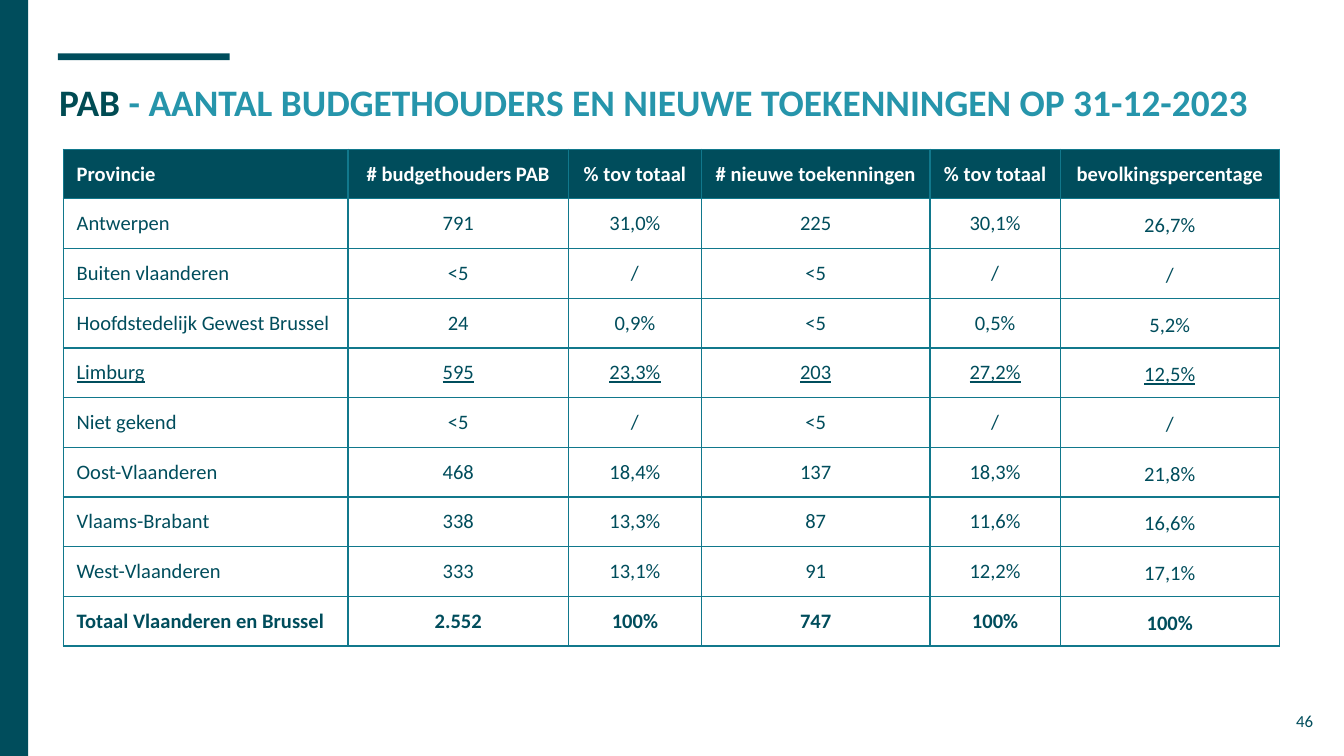
from lxml import etree
from pptx import Presentation
from pptx.dml.color import RGBColor
from pptx.enum.shapes import MSO_SHAPE
from pptx.enum.text import MSO_ANCHOR, MSO_AUTO_SIZE, PP_ALIGN
from pptx.oxml.ns import qn
from pptx.util import Pt

RECTANGLE = MSO_SHAPE.RECTANGLE
TOP, MIDDLE = MSO_ANCHOR.TOP, MSO_ANCHOR.MIDDLE
LEFT, CENTER, RIGHT = PP_ALIGN.LEFT, PP_ALIGN.CENTER, PP_ALIGN.RIGHT
NO_AUTOFIT = MSO_AUTO_SIZE.NONE

TITLE_ONLY = 5
FONT = "Calibri"
TEAL, DARK_TEAL, BLUE, BORDER, WHITE = "004D5C", "004B53", "2695AB", "11788C", "FFFFFF"
COLUMN_WIDTHS = [152.64, 118.08, 71.28, 122.4, 69.84, 117.36]
ROW_HEIGHT = 26.64
HEADER = ["Provincie", "# budgethouders PAB", "% tov totaal",
          "# nieuwe toekenningen", "% tov totaal", "bevolkingspercentage"]
PROVINCES = [
    ["Antwerpen", "791", "31,0%", "225", "30,1%", "26,7%"],
    ["Buiten vlaanderen", "<5", "/", "<5", "/", "/"],
    ["Hoofdstedelijk Gewest Brussel", "24", "0,9%", "<5", "0,5%", "5,2%"],
    ["Limburg", "595", "23,3%", "203", "27,2%", "12,5%"],
    ["Niet gekend", "<5", "/", "<5", "/", "/"],
    ["Oost-Vlaanderen", "468", "18,4%", "137", "18,3%", "21,8%"],
    ["Vlaams-Brabant", "338", "13,3%", "87", "11,6%", "16,6%"],
    ["West-Vlaanderen", "333", "13,1%", "91", "12,2%", "17,1%"],
]
TOTAL = ["Totaal Vlaanderen en Brussel", "2.552", "100%", "747", "100%", "100%"]


def colour(value):
    """Turn a hex string into a colour."""
    return RGBColor.from_string(value)


def apply(target, values):
    """Set each attribute of the target from a dict."""
    for name, value in values.items():
        setattr(target, name, value)


def place(left, top, width, height):
    """Name the position and size, given in points."""
    return {"left": Pt(left), "top": Pt(top), "width": Pt(width), "height": Pt(height)}


def add_span(para, text, fill, **font):
    """Add a run with its font values."""
    span = para.add_run()
    span.text = text
    apply(span.font, {"name": FONT, **font})
    span.font.color.rgb = colour(fill)


def format_frame(frame):
    """Give a text frame its insets, wrapping and top anchor."""
    apply(frame, {"word_wrap": True, "auto_size": NO_AUTOFIT, "vertical_anchor": TOP})
    for side in ("left", "top", "right", "bottom"):
        setattr(frame, f"margin_{side}", Pt(7.2))


def add_bar(page, **box):
    """Add a solid teal bar."""
    bar = page.shapes.add_shape(RECTANGLE, **box)
    bar.shadow.inherit = False
    bar.fill.solid()
    bar.fill.fore_color.rgb = colour(TEAL)
    bar.line.fill.background()


def fill_title(page):
    """Write the two-coloured title in its placeholder."""
    title = page.shapes.title
    apply(title, place(24.48, 35.28, 671.04, 45.36))
    format_frame(title.text_frame)
    para = title.text_frame.paragraphs[0]
    para.alignment = LEFT
    add_span(para, "PAB ", DARK_TEAL, size=Pt(20), bold=True)
    add_span(para, "- AANTAL BUDGETHOUDERS EN NIEUWE TOEKENNINGEN OP 31-12-2023",
             BLUE, size=Pt(20), bold=True)


def add_page_number(page, number):
    """Add the page number at the bottom right."""
    box = page.shapes.add_textbox(**place(667.44, 373.68, 43.2, 30.96))
    format_frame(box.text_frame)
    para = box.text_frame.paragraphs[0]
    para.alignment = RIGHT
    add_span(para, number, TEAL, size=Pt(9))


def add_borders(cell):
    """Draw a thin line on all four sides of a cell."""
    properties = cell._tc.get_or_add_tcPr()
    for side in ("lnL", "lnR", "lnT", "lnB"):
        line = etree.SubElement(properties, qn(f"a:{side}"), w=str(Pt(0.75)))
        solid = etree.SubElement(line, qn("a:solidFill"))
        etree.SubElement(solid, qn("a:srgbClr"), val=BORDER)


def fill_cell(cell, text, column, header, **font):
    """Write and format one table cell."""
    apply(cell, {"vertical_anchor": MIDDLE, "margin_left": Pt(7.2),
                 "margin_right": Pt(7.2), "margin_top": 0, "margin_bottom": 0})
    add_borders(cell)
    if header:
        cell.fill.solid()
        cell.fill.fore_color.rgb = colour(TEAL)
    else:
        cell.fill.background()
    para = cell.text_frame.paragraphs[0]
    para.alignment = CENTER if column else LEFT
    if column == len(HEADER) - 1 and not header:
        para.line_spacing = 1.15
    add_span(para, text, WHITE if header else TEAL, size=Pt(11), **font)


def add_province_table(page):
    """Add the table of budget holders by province."""
    rows = [HEADER, *PROVINCES, TOTAL]
    box = place(33.84, 79.92, sum(COLUMN_WIDTHS), ROW_HEIGHT * len(rows))
    table = page.shapes.add_table(len(rows), len(HEADER), **box).table
    apply(table, {"first_row": False, "horz_banding": False})
    for column, width in zip(table.columns, COLUMN_WIDTHS):
        column.width = Pt(width)
    for index, values in enumerate(rows):
        table.rows[index].height = Pt(ROW_HEIGHT)
        font = {"bold": values in (HEADER, TOTAL), "underline": values[0] == "Limburg"}
        for column, text in enumerate(values):
            fill_cell(table.cell(index, column), text, column, index == 0, **font)


def main():
    """Build the slide and save the deck."""
    deck = Presentation()
    apply(deck, {"slide_width": Pt(720), "slide_height": Pt(405)})
    page = deck.slides.add_slide(deck.slide_layouts[TITLE_ONLY])
    add_bar(page, **place(30.96, 28.6, 92.16, 3.6))
    add_bar(page, **place(0, 0, 15.12, 405))
    fill_title(page)
    add_page_number(page, "46")
    add_province_table(page)
    deck.save("out.pptx")


if __name__ == "__main__":
    main()
